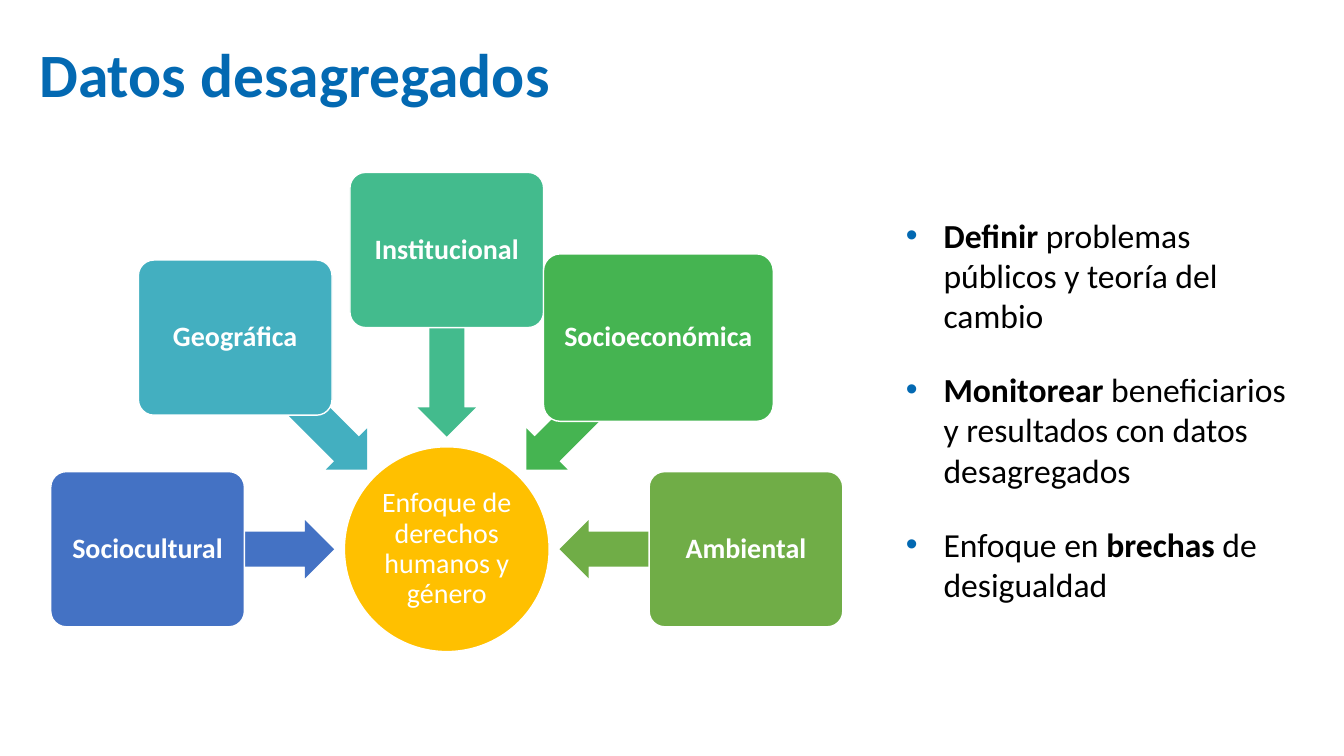
from math import cos, radians, sin

from lxml.etree import SubElement
from pptx import Presentation
from pptx.dml.color import RGBColor
from pptx.enum.shapes import MSO_SHAPE
from pptx.enum.text import MSO_ANCHOR, PP_ALIGN
from pptx.oxml.ns import qn
from pptx.util import Cm, Pt

HUES = {
    "title": "0369B2", "text": "000000", "white": "FFFFFF", "core": "FFC000",
    "blue": "4472C4", "teal": "43AFC0", "mint": "43BB8D",
    "green": "45B451", "olive": "70AD47",
}
MID = (11.26, 13.84)  # centre of the wheel, cm
FACETS = [  # label, colour, angle, width, height
    ("Sociocultural", "blue", 180, 4.88, 3.91),
    ("Geográfica", "teal", 135, 4.88, 3.91),
    ("Institucional", "mint", 90, 4.88, 3.91),
    ("Socioeconómica", "green", 45, 5.79, 4.22),
    ("Ambiental", "olive", 0, 4.88, 3.91),
]
USES = [  # runs as (text, bold)
    [("Definir", True), (" problemas públicos y teoría del cambio", False)],
    [("Monitorear", True),
     (" beneficiarios y resultados con datos desagregados", False)],
    [("Enfoque en ", False), ("brechas", True), (" de desigualdad", False)],
]


class Deck:
    face = "Calibri"

    def __init__(self, slide):
        self.slide = slide

    def hue(self, name):
        return RGBColor.from_string(HUES[name])

    def style(self, para, size, color, bold=None):
        font = para.font
        font.name, font.size, font.bold = self.face, Pt(size), bold
        font.color.rgb = self.hue(color)

    def shape(self, kind, mid, width, height, color, edge=True):
        """Add a filled shape centred on mid."""
        item = self.slide.shapes.add_shape(
            kind, Cm(mid[0] - width / 2), Cm(mid[1] - height / 2),
            Cm(width), Cm(height))
        item.shadow.inherit = False
        item.fill.solid()
        item.fill.fore_color.rgb = self.hue(color)
        if edge:
            item.line.color.rgb = self.hue("white")
            item.line.width = Pt(1)
        else:
            item.line.fill.background()
        return item

    def label(self, item, text, pad, bold=None):
        frame = item.text_frame
        frame.word_wrap = True
        frame.vertical_anchor = MSO_ANCHOR.MIDDLE
        frame.margin_left = frame.margin_right = Cm(pad)
        frame.margin_top = frame.margin_bottom = Cm(pad)
        para = frame.paragraphs[0]
        para.text = text
        para.alignment = PP_ALIGN.CENTER
        para.line_spacing = 0.9
        self.style(para, 20, "white", bold)

    def arrow(self, mid, angle, color):
        """Add an arrow that points back to the wheel's centre."""
        item = self.shape(MSO_SHAPE.LEFT_ARROW, mid, 4.7, 1.47, color, False)
        item.adjustments[0] = 0.6
        item.rotation = -angle % 360

    def box(self, mid, width, height, text, color):
        item = self.shape(MSO_SHAPE.ROUNDED_RECTANGLE, mid, width, height, color)
        item.adjustments[0] = 0.1
        self.label(item, text, 0.11, True)

    def frame(self, left, top, width, height):
        item = self.slide.shapes.add_textbox(
            Cm(left), Cm(top), Cm(width), Cm(height))
        item.text_frame.word_wrap = True
        return item.text_frame

    def title(self, text):
        para = self.frame(0.74, 0.99, 30.58, 2.62).paragraphs[0]
        para.text = text
        para.line_spacing = 0.9
        self.style(para, 44, "title", True)

    def bullets(self, rows):
        frame = self.frame(22.58, 5.28, 10.11, 10.19)
        for num, row in enumerate(rows):
            para = frame.add_paragraph() if num else frame.paragraphs[0]
            props = para._p.get_or_add_pPr()
            props.set("marL", str(Cm(0.95)))
            props.set("indent", str(Cm(-0.95)))
            tint = SubElement(props, qn("a:buClr"))
            SubElement(tint, qn("a:srgbClr"), val=HUES["title"])
            SubElement(props, qn("a:buFont"), typeface="Arial")
            SubElement(props, qn("a:buChar"), char="•")
            para.space_after = Pt(24)
            self.style(para, 24, "text")
            for text, bold in row:
                run = para.add_run()
                run.text, run.font.bold = text, bold


def polar(dist, angle):
    turn = radians(angle)
    return MID[0] + dist * cos(turn), MID[1] - dist * sin(turn)


def main():
    show = Presentation()
    show.slide_width, show.slide_height = Cm(33.87), Cm(19.05)
    deck = Deck(show.slides.add_slide(show.slide_layouts[6]))

    # Centre of the wheel
    core = deck.shape(MSO_SHAPE.OVAL, MID, 5.16, 5.16, "core")
    deck.label(core, "Enfoque de derechos humanos y género", 0.03)

    # Facets around it, each with its arrow
    for text, color, angle, width, height in FACETS:
        deck.arrow(polar(5.19, angle), angle, color)
        deck.box(polar(7.54, angle), width, height, text, color)

    # Text
    deck.bullets(USES)
    deck.title("Datos desagregados")
    show.save("out.pptx")


if __name__ == "__main__":
    main()
